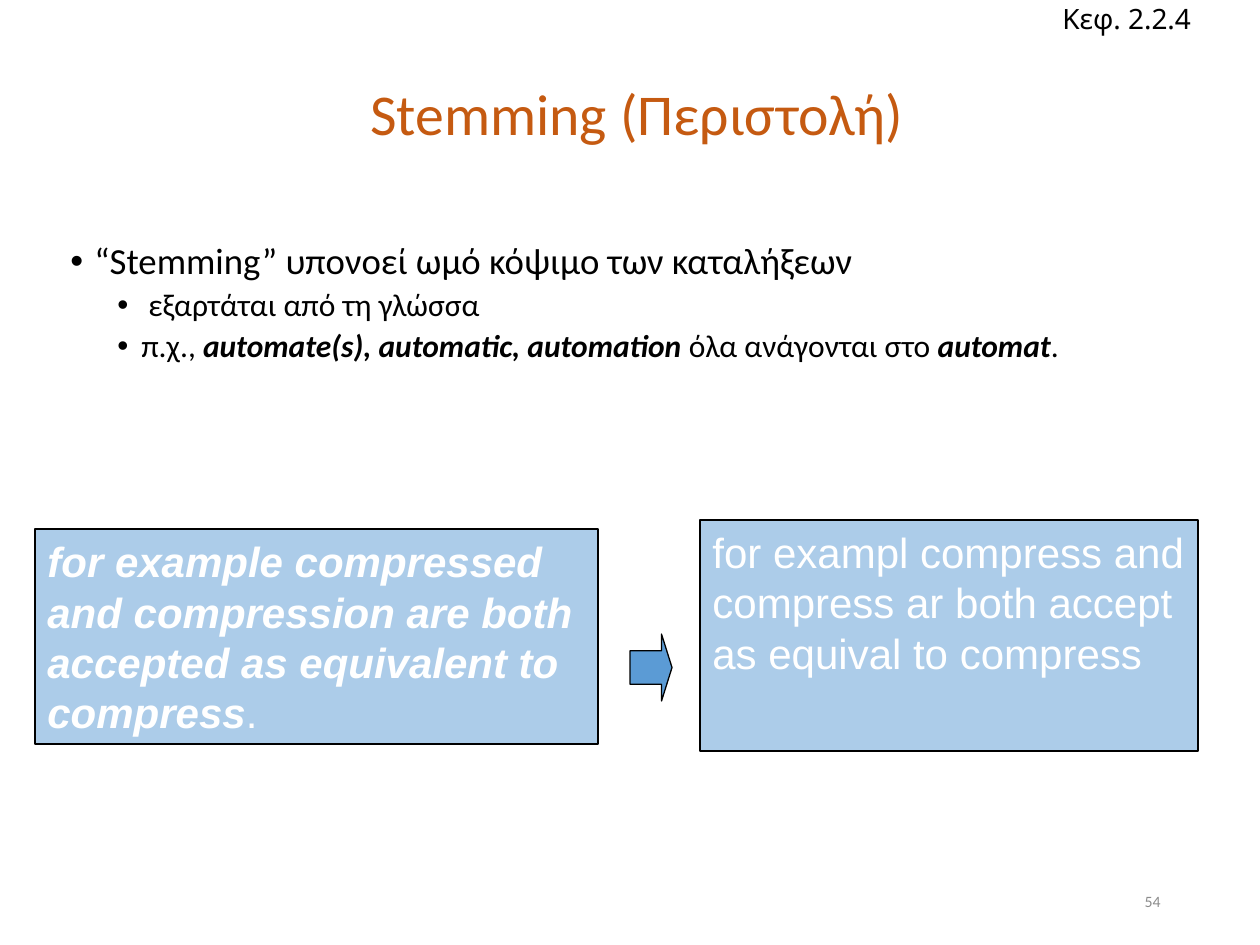
from lxml import etree
from pptx import Presentation
from pptx.dml.color import RGBColor
from pptx.enum.shapes import MSO_SHAPE
from pptx.enum.text import MSO_ANCHOR, MSO_AUTO_SIZE, PP_ALIGN
from pptx.oxml.ns import qn
from pptx.util import Emu, Pt

RECTANGLE = MSO_SHAPE.RECTANGLE
RIGHT_ARROW = MSO_SHAPE.RIGHT_ARROW
TOP, MIDDLE = MSO_ANCHOR.TOP, MSO_ANCHOR.MIDDLE
LEFT, CENTER, RIGHT = PP_ALIGN.LEFT, PP_ALIGN.CENTER, PP_ALIGN.RIGHT
GROW = MSO_AUTO_SIZE.SHAPE_TO_FIT_TEXT
FIXED = MSO_AUTO_SIZE.NONE

BLACK, WHITE, BLUE, ORANGE, GRAY = "000000", "FFFFFF", "5B9BD5", "C55A11", "8C8C8C"


def px(length):
    """Turn pixels into EMU at 126 pixels to the inch."""
    return Emu(round(length * 914400 / 126))


def color(value):
    """Turn a hex string into a colour."""
    return RGBColor.from_string(value)


def set_bullet(paragraph, margin, hanging):
    """Give a paragraph a hanging round bullet."""
    properties = paragraph._p.get_or_add_pPr()
    properties.set("marL", str(px(margin)))
    properties.set("indent", str(-px(hanging)))
    etree.SubElement(properties, qn("a:buFont")).set("typeface", "Arial")
    etree.SubElement(properties, qn("a:buChar")).set("char", "•")


def write(frame, runs, size=18, font="Calibri", fill=BLACK, align=LEFT,
          line_spacing=None, before=0, level=0, bullet_margin=None):
    """Write one paragraph from (text, emphasis) runs."""
    paragraph = frame.paragraphs[0]
    if paragraph.runs:
        paragraph = frame.add_paragraph()
    paragraph.alignment = align
    paragraph.level = level
    paragraph.space_before = Pt(before)
    if line_spacing:
        paragraph.line_spacing = line_spacing
    if bullet_margin:
        set_bullet(paragraph, bullet_margin, 24)
    for text, emphasis in runs:
        run = paragraph.add_run()
        run.text = text
        run.font.size = Pt(size)
        run.font.name = font
        run.font.bold = run.font.italic = emphasis
        run.font.color.rgb = color(fill)


def set_frame(shape, anchor=TOP, wrap=True, auto_size=FIXED):
    """Set the layout of a shape's text and return its frame."""
    frame = shape.text_frame
    frame.auto_size = auto_size
    frame.word_wrap = wrap
    frame.vertical_anchor = anchor
    return frame


def add_text(slide, box, **layout):
    """Add a text box and return its frame."""
    return set_frame(slide.shapes.add_textbox(*map(px, box)), **layout)


def add_block(slide, kind, box, opacity=100):
    """Add a blue outlined preset shape."""
    shape = slide.shapes.add_shape(kind, *map(px, box))
    shape.shadow.inherit = False
    shape.fill.solid()
    shape.fill.fore_color.rgb = color(BLUE)
    if opacity < 100:
        fill = shape._element.spPr.find(qn("a:solidFill"))
        etree.SubElement(fill[0], qn("a:alpha")).set("val", str(opacity * 1000))
    shape.line.color.rgb = color(BLACK)
    shape.line.width = Pt(0.75)
    return shape


def add_example(slide, box, lines, **layout):
    """Add a translucent box with one paragraph for each line of runs."""
    frame = set_frame(add_block(slide, RECTANGLE, box, opacity=50), wrap=False, **layout)
    for runs in lines:
        write(frame, runs, size=24, font="Arial", fill=WHITE)


def add_bullets(slide):
    """Add the explanation of stemming."""
    frame = add_text(slide, (58, 237, 1134, 205))
    write(frame, [("“Stemming” υπονοεί ωμό κόψιμο των καταλήξεων", False)],
          size=21, line_spacing=0.9, before=7.5, bullet_margin=24)
    details = [
        [(" εξαρτάται από τη γλώσσα", False)],
        [("π.χ., ", False), ("automate(s), automatic, automation ", True),
         ("όλα ανάγονται στο ", False), ("automat", True), (".", False)],
    ]
    for runs in details:
        write(frame, runs, line_spacing=0.9, before=3.8, level=1, bullet_margin=71)


def main():
    """Build the stemming slide."""
    presentation = Presentation()
    presentation.slide_width, presentation.slide_height = px(1260), px(945)
    slide = presentation.slides.add_slide(presentation.slide_layouts[6])

    title = add_text(slide, (94, 25, 1086, 183), anchor=MIDDLE)
    write(title, [("Stemming (Περιστολή)", False)], size=33, fill=ORANGE,
          align=CENTER, line_spacing=0.9)
    add_bullets(slide)
    number = add_text(slide, (890, 876, 283, 50), anchor=MIDDLE)
    write(number, [("54", False)], size=9, fill=GRAY, align=RIGHT)

    add_example(slide, (35, 529, 563, 215), [
        [("for example compressed", True)],
        [("and compression are both", True)],
        [("accepted as equivalent to", True)],
        [("compress", True), (".", False)],
    ], anchor=MIDDLE, auto_size=GROW)
    add_example(slide, (700, 520, 498, 231), [
        [("for exampl compress and", False)],
        [("compress ar both accept", False)],
        [("as equival to compress", False)],
    ])
    arrow = add_block(slide, RIGHT_ARROW, (630, 634, 42, 67))
    arrow.adjustments[0], arrow.adjustments[1] = 0.5, 0.25

    chapter = add_text(slide, (1050, -5, 165, 47), anchor=MIDDLE, wrap=False, auto_size=GROW)
    write(chapter, [("Κεφ. 2.2.4", False)], size=16, font="Noto Sans")

    presentation.save("out.pptx")


if __name__ == "__main__":
    main()
